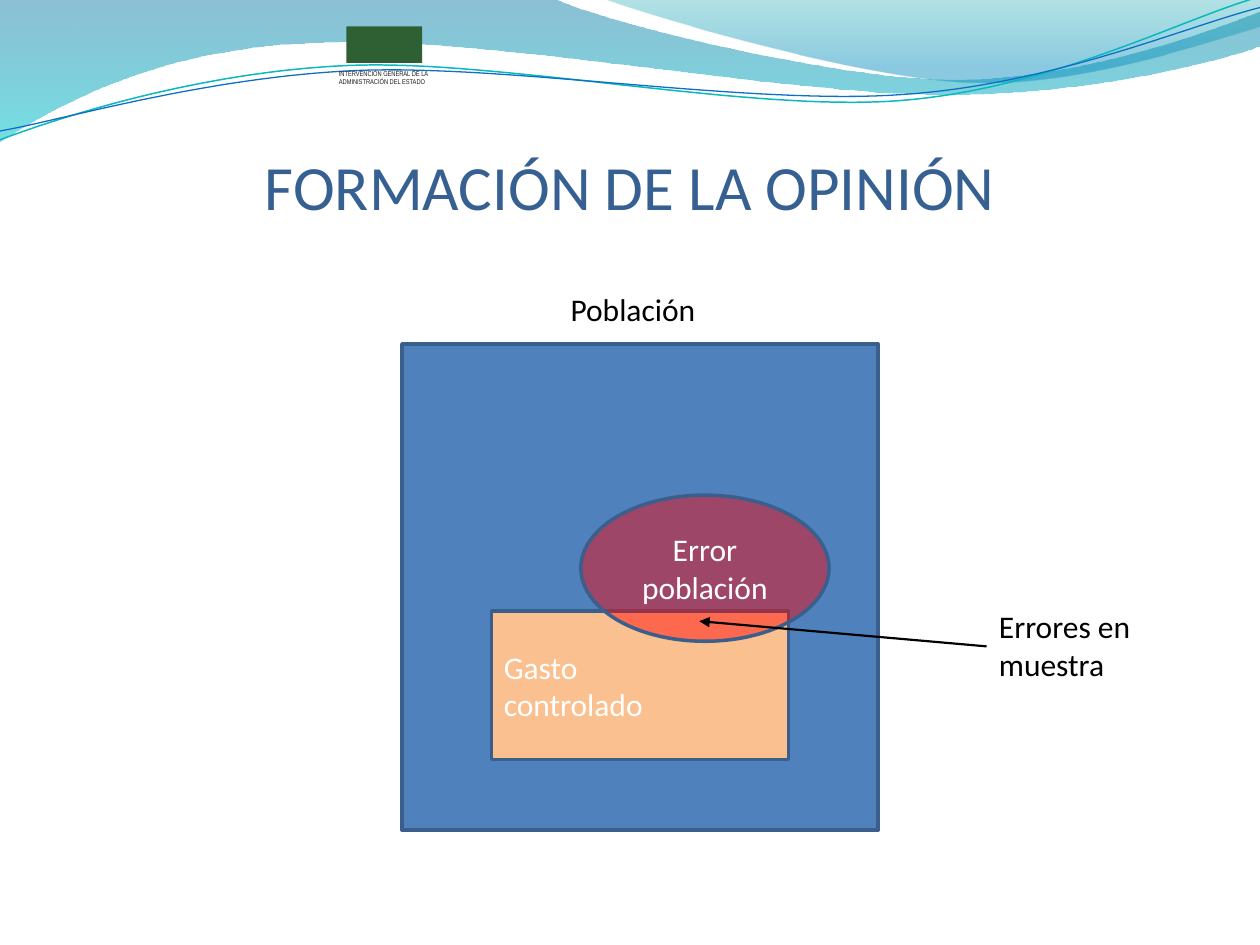
"""Build the slide on forming the audit opinion from a sample."""
import pptx
import pptx.util
import pptx.dml.color
import pptx.enum.shapes
import pptx.enum.text
import pptx.oxml
import lxml.etree

PX = 9144
STEPS = 32
NS = pptx.oxml.ns.qn
KIND = pptx.enum.shapes.MSO_SHAPE
ALIGN = pptx.enum.text.PP_ALIGN
ANCHOR = pptx.enum.text.MSO_ANCHOR
HEX = {
    "deep": "0074A1", "aqua": "00C6CF", "teal": "00A1A9", "sky": "008BBF",
    "cyan": "0AB8BF", "blue": "0F6FC6", "green": "2E6033", "ink": "1F1A17",
    "title": "376092", "base": "4F81BD", "edge": "3A5F8C", "sand": "FAC090",
    "red": "FF0000", "white": "FFFFFF", "black": "000000",
}
RGB = {name: pptx.dml.color.RGBColor.from_string(code) for name, code in HEX.items()}


def fade(node, part):
    for color in node.iter(NS("a:srgbClr")):
        lxml.etree.SubElement(color, NS("a:alpha")).set("val", str(part * 1000))


def write(shape, lines, size, color, align=ALIGN.LEFT, anchor=ANCHOR.TOP, wrap=True, face="Calibri"):
    frame = shape.text_frame
    frame.text = "\n".join(lines)
    frame.word_wrap = wrap
    frame.vertical_anchor = anchor
    for para in frame.paragraphs:
        para.alignment = align
        para.font.size = pptx.util.Pt(size)
        para.font.name = face
        para.font.color.rgb = RGB[color]


deck = pptx.Presentation()
deck.slide_width, deck.slide_height = 1000 * PX, 750 * PX
slide = deck.slides.add_slide(deck.slide_layouts[6])
shapes = slide.shapes

waves = [
    ([(0, 0), (440, -1), (476, 17, 664, 63, 758, 63), (853, 63, 958, 26, 1000, 9),
      (1001, 36), (983, 44, 870, 76, 746, 75), (622, 75, 382, 28, 257, 34),
      (129, 36, 46, 83, -1, 113)],
     [("deep", 0, 45), ("aqua", 1, 55)], None),
    ([(479, -1), (509, 11, 682, 62, 769, 65), (856, 69, 961, 32, 1000, 21), (1000, 0)],
     [("teal", 0, 30), ("sky", 0.8, 45)], None),
    ([(0, 111), (48, 93, 158, 57, 277, 52), (395, 47, 593, 89, 713, 80),
      (833, 71, 938, 15, 998, -2)],
     None, ("cyan", 0.85)),
    ([(0, 104), (47, 96, 164, 61, 283, 56), (403, 51, 597, 84, 717, 75),
      (836, 67, 941, 21, 1000, 6)],
     None, ("blue", 0.75)),
]
for path, stops, pen in waves:
    dots = [path[0]]
    for step in path[1:]:
        if len(step) == 2:
            dots.append(step)
            continue
        ends = [dots[-1], step[:2], step[2:4], step[4:]]
        for i in range(1, STEPS + 1):
            t = i / STEPS
            mix = [(1 - t) ** 3, 3 * t * (1 - t) ** 2, 3 * t * t * (1 - t), t ** 3]
            dots.append(tuple(sum(m * e[k] for m, e in zip(mix, ends)) for k in (0, 1)))
    dots = [(round(x * PX), round(y * PX)) for x, y in dots]
    pencil = shapes.build_freeform(*dots[0], scale=1.0)
    pencil.add_line_segments(dots[1:], close=stops is not None)
    wave = pencil.convert_to_shape()
    wave.shadow.inherit = False
    if stops:
        wave.fill.gradient()
        wave.fill.gradient_angle = 270
        for stop, (color, place, part) in zip(wave.fill.gradient_stops, stops):
            stop.color.rgb = RGB[color]
            stop.position = place
        for node, (color, place, part) in zip(wave._element.iter(NS("a:gs")), stops):
            fade(node, part)
        wave.line.fill.background()
    else:
        wave.fill.background()
        wave.line.color.rgb = RGB[pen[0]]
        wave.line.width = pptx.util.Pt(pen[1])

forms = {}
for name, kind, box, fill, edge in [
    ("badge", KIND.RECTANGLE, (275, 21, 60, 29), "green", None),
    ("whole", KIND.RECTANGLE, (319, 273, 378, 386), "base", "edge"),
    ("spent", KIND.RECTANGLE, (390, 485, 236, 118), "sand", "edge"),
    ("error", KIND.OVAL, (461, 393, 197, 116), "red", "edge"),
]:
    form = shapes.add_shape(kind, *(n * PX for n in box))
    form.shadow.inherit = False
    form.fill.solid()
    form.fill.fore_color.rgb = RGB[fill]
    if edge:
        form.line.color.rgb = RGB[edge]
        form.line.width = pptx.util.Pt(2)
    else:
        form.line.fill.background()
    forms[name] = form

write(forms["spent"], ["Gasto", "controlado"], 18, "white", anchor=ANCHOR.MIDDLE)
write(forms["error"], ["Error población"], 18, "white", ALIGN.CENTER, ANCHOR.MIDDLE)
fade(forms["error"]._element.spPr.find(NS("a:solidFill")), 45)

motto = shapes.add_textbox(269 * PX, 55 * PX, 73 * PX, 13 * PX)
write(motto, ["INTERVENCIÓN GENERAL DE LA", "ADMINISTRACIÓN DEL ESTADO"], 4, "ink",
      wrap=False, face="Arial Narrow")
inner = motto.text_frame
inner.margin_left = inner.margin_right = inner.margin_top = inner.margin_bottom = 0

title = shapes.add_textbox(69 * PX, 99 * PX, 862 * PX, 96 * PX)
write(title, ["FORMACIÓN DE LA OPINIÓN"], 36, "title", ALIGN.CENTER, ANCHOR.MIDDLE)

for box, lines in [
    ((443, 225, 120, 40), ["Población"]),
    ((783, 477, 126, 71), ["Errores en", "muestra"]),
]:
    label = shapes.add_textbox(*(n * PX for n in box))
    write(label, lines, 18, "black", wrap=False)

arrow = shapes.add_connector(pptx.enum.shapes.MSO_CONNECTOR.STRAIGHT,
                             783 * PX, 513 * PX, 555 * PX, 493 * PX)
arrow.line.color.rgb = RGB["black"]
arrow.line.width = pptx.util.Pt(1.25)
lxml.etree.SubElement(arrow.line._get_or_add_ln(), NS("a:tailEnd")).set("type", "triangle")
lxml.etree.SubElement(arrow._element.spPr, NS("a:effectLst"))

deck.save("out.pptx")
